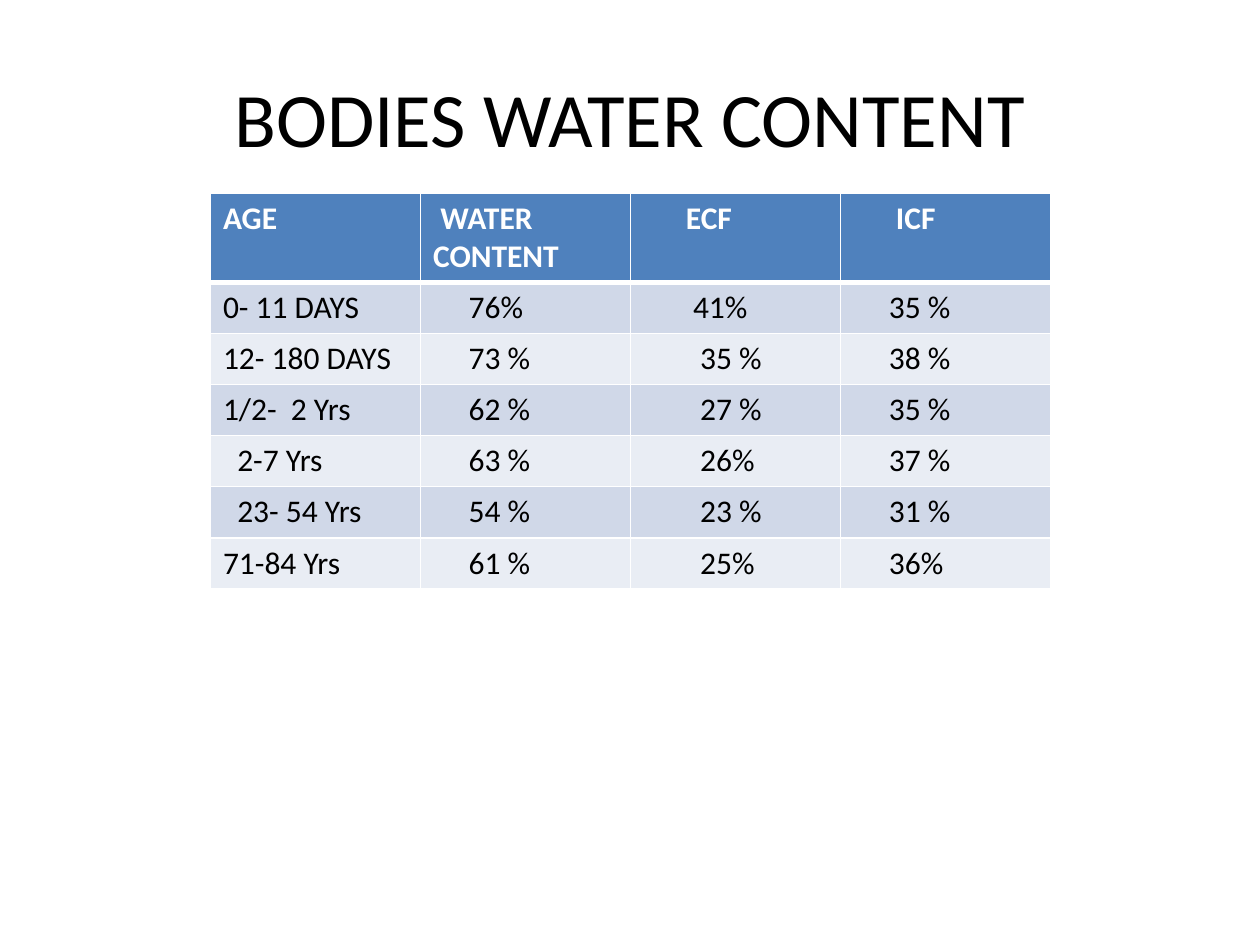
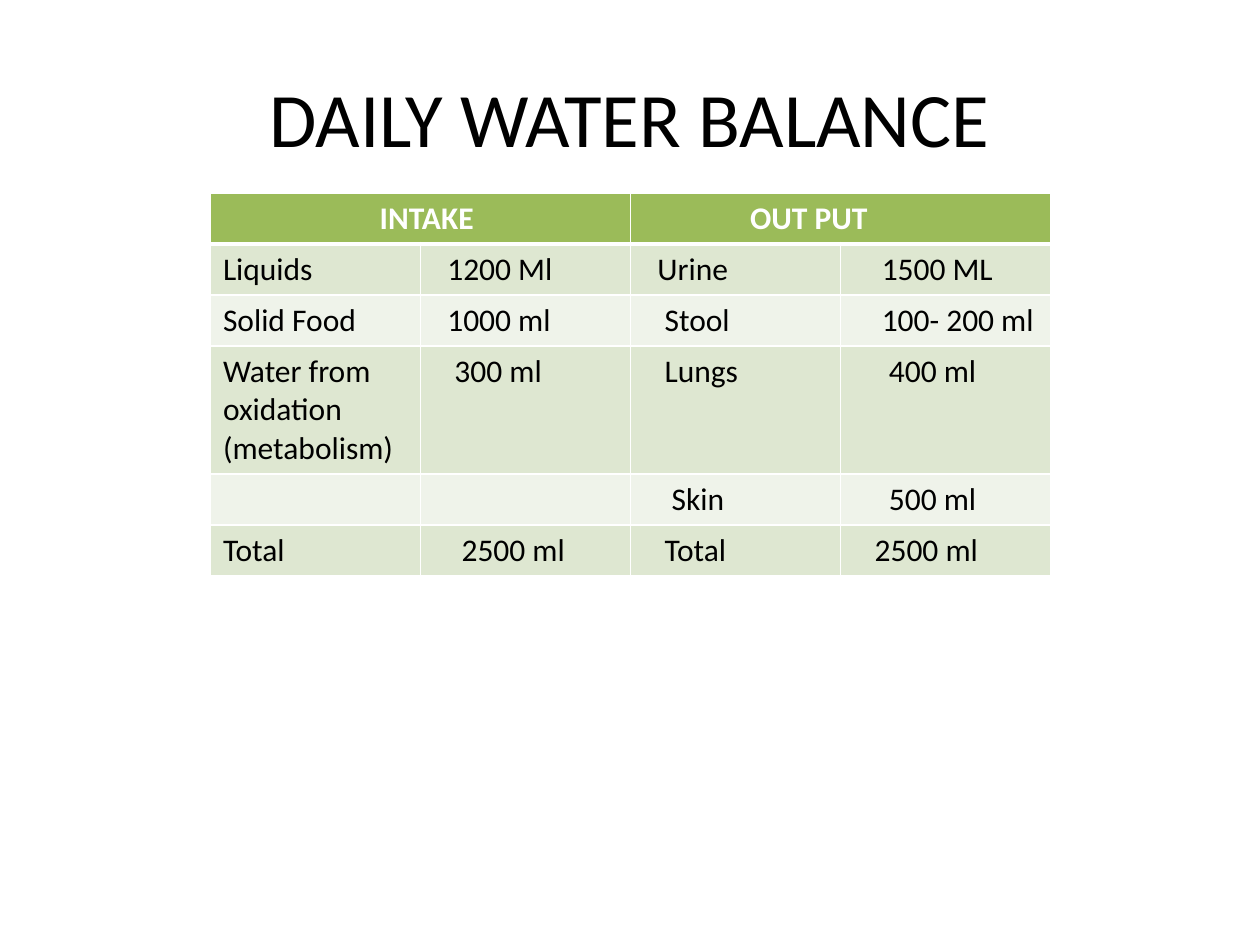
import pptx
import pptx.util
import pptx.dml.color
import pptx.enum.text
import pptx.oxml
import pptx.oxml.ns
from lxml import etree

Inches = pptx.util.Inches
Pt = pptx.util.Pt
RGB = pptx.dml.color.RGBColor

# Shared look
FACE = "Calibri"
BLACK = RGB(0, 0, 0)
WHITE = RGB(255, 255, 255)
BLUES = (RGB(0x4F, 0x81, 0xBD), RGB(0xD0, 0xD8, 0xE8), RGB(0xE9, 0xED, 0xF4))
GREENS = (RGB(0x9B, 0xBB, 0x59), RGB(0xDE, 0xE7, 0xD1), RGB(0xEF, 0xF3, 0xEA))
TITLE = {"name": FACE, "size": Pt(44), "bold": False}
HEAD = {"name": FACE, "size": Pt(18), "bold": True}
BODY = {"name": FACE, "size": Pt(18), "bold": False}
STEP = Pt(4.07)  # one unit of first-line indent

TITLE_BOX = (0.5, 0.3, 9, 1.25)
TABLE_BOX = (1.67, 1.53, 6.67, 3)
ROW = 0.4

# Each row: indent units per cell, then the cell texts
AGES = [
    ((0, 1, 6, 6), "AGE", "WATER CONTENT", "ECF", "ICF"),
    ((0, 5, 7, 5), "0- 11 DAYS", "76%", "41%", "35 %"),
    ((0, 5, 8, 5), "12- 180 DAYS", "73 %", "35 %", "38 %"),
    ((0, 5, 8, 5), "1/2-  2 Yrs", "62 %", "27 %", "35 %"),
    ((2, 5, 8, 5), "2-7 Yrs", "63 %", "26%", "37 %"),
    ((2, 5, 8, 5), "23- 54 Yrs", "54 %", "23 %", "31 %"),
    ((0, 5, 8, 5), "71-84 Yrs", "61 %", "25%", "36%"),
]
BALANCE = [
    ((22, 0, 15, 0), "INTAKE", "", "OUT PUT", ""),
    ((0, 2, 2, 4), "Liquids", "1200 Ml", "Urine", "1500 ML"),
    ((0, 2, 3, 4), "Solid Food", "1000 ml", "Stool", "100- 200 ml"),
    ((0, 3, 3, 5), "Water from oxidation\n(metabolism)", "300 ml", "Lungs", "400 ml"),
    ((0, 0, 4, 5), "", "", "Skin", "500 ml"),
    ((0, 4, 3, 3), "Total", "2500 ml", "Total", "2500 ml"),
]


def style(font, look, color):
    for key, value in look.items():
        setattr(font, key, value)
    font.color.rgb = color


def add_title(slide, text, box):
    title = slide.shapes.title
    for key, value in zip(("left", "top", "width", "height"), box):
        setattr(title, key, Inches(value))
    frame = title.text_frame
    frame.text = text
    frame.vertical_anchor = pptx.enum.text.MSO_ANCHOR.MIDDLE
    para = frame.paragraphs[0]
    para.alignment = pptx.enum.text.PP_ALIGN.CENTER
    style(para.runs[0].font, TITLE, BLACK)


def add_edges(cell, row):
    """Draw white cell borders, with a thick rule under the header."""
    widths = {"L": 1, "R": 1, "T": 3 if row == 1 else 1, "B": 3 if row == 0 else 1}
    props = cell._tc.get_or_add_tcPr()
    for side, width in widths.items():
        line = etree.SubElement(props, pptx.oxml.ns.qn("a:ln" + side), w=str(Pt(width)))
        fill = etree.SubElement(line, pptx.oxml.ns.qn("a:solidFill"))
        etree.SubElement(fill, pptx.oxml.ns.qn("a:srgbClr"), val=str(WHITE))


def fill_cell(cell, text, pad, row, tones):
    cell.text = text
    for para in cell.text_frame.paragraphs:
        if pad:
            para._p.get_or_add_pPr().set("indent", str(pad * STEP))
        style(para.font, BODY if row else HEAD, BLACK if row else WHITE)
    add_edges(cell, row)
    cell.fill.solid()
    # Header tone first, then two alternating bands
    cell.fill.fore_color.rgb = tones[2 - row % 2] if row else tones[0]


def add_grid(slide, rows, tones, box, merges=()):
    left, top, width, height = map(Inches, box)
    cols = len(rows[0]) - 1
    grid = slide.shapes.add_table(len(rows), cols, left, top, width, height).table
    for col in grid.columns:
        col.width = width // cols
    for r, (pads, *texts) in enumerate(rows):
        grid.rows[r].height = Inches(ROW)
        for c, (pad, text) in enumerate(zip(pads, texts)):
            fill_cell(grid.cell(r, c), text, pad, r, tones)
    for first, last in merges:
        grid.cell(0, first).merge(grid.cell(0, last))


def add_page(deck, title, rows, tones, merges=()):
    slide = deck.slides.add_slide(deck.slide_layouts[5])
    add_title(slide, title, TITLE_BOX)
    add_grid(slide, rows, tones, TABLE_BOX, merges)


def main():
    deck = pptx.Presentation()
    deck.slide_width, deck.slide_height = Inches(10), Inches(7.5)
    add_page(deck, "BODIES WATER CONTENT", AGES, BLUES)
    add_page(deck, "DAILY WATER BALANCE", BALANCE, GREENS, ((0, 1), (2, 3)))
    deck.save("out.pptx")


if __name__ == "__main__":
    main()
